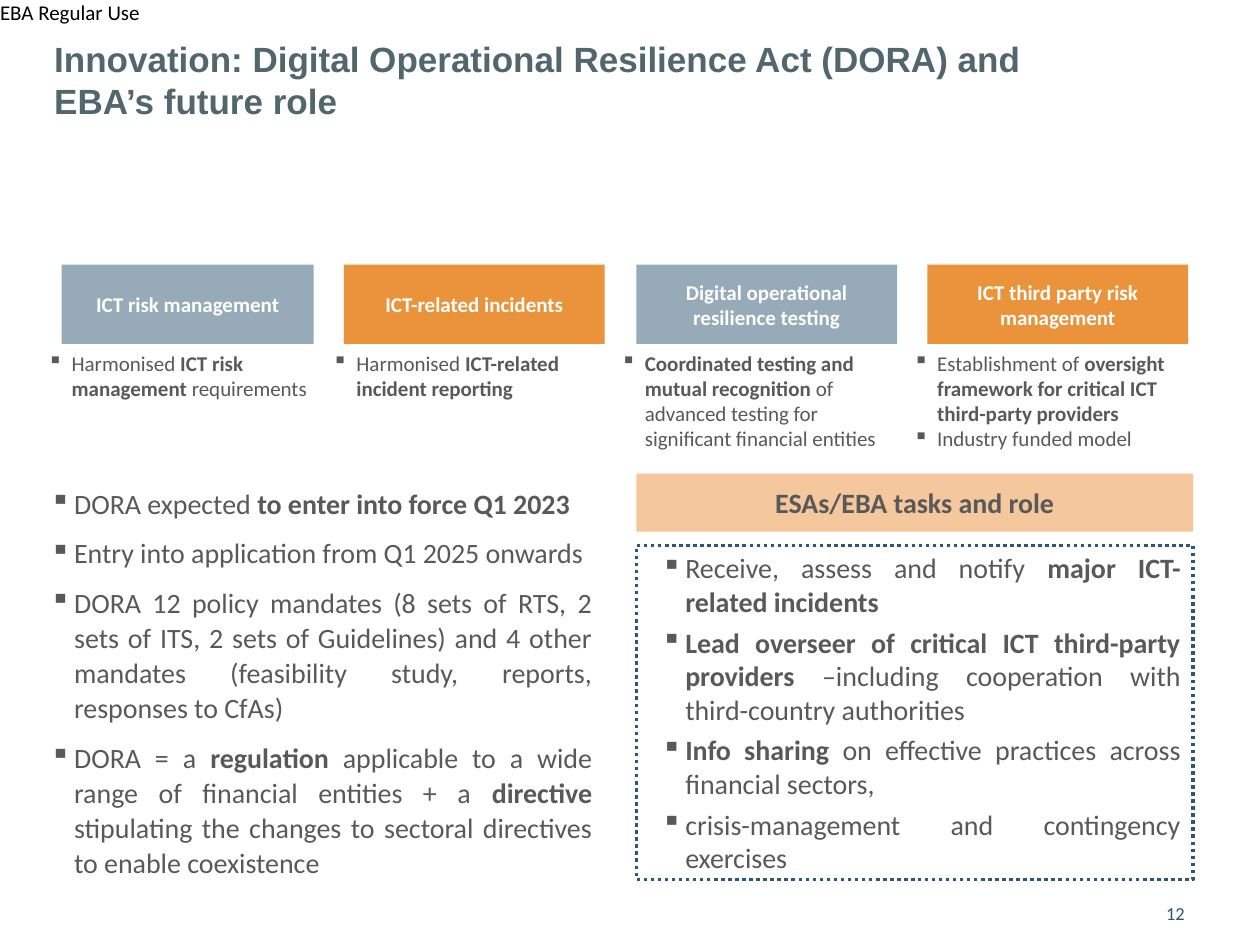
from lxml.etree import SubElement
from pptx import Presentation
from pptx.dml.color import RGBColor
from pptx.enum.dml import MSO_LINE
from pptx.enum.shapes import MSO_SHAPE
from pptx.enum.text import MSO_ANCHOR, MSO_AUTO_SIZE, PP_ALIGN
from pptx.oxml.ns import qn
from pptx.util import Inches, Pt

BLUE, ORANGE, GREY, SLATE, WHITE = "2F5773", "EA933B", "595959", "52666E", "FFFFFF"


def color(hex_string):
    return RGBColor.from_string(hex_string)


def box(left, top, width, height):
    return [Inches(value) for value in (left, top, width, height)]


class SlideBuilder:
    def __init__(self, slide, font="Calibri"):
        self.slide = slide
        self.font = font

    def style(self, paragraph, size, hex_color, bold=False, font=None):
        for run in paragraph.runs:
            run.font.name = font or self.font
            run.font.size = Pt(size)
            run.font.bold = bold
            run.font.color.rgb = color(hex_color)

    def title(self, text, *position):
        title = self.slide.shapes.title
        title.left, title.top, title.width, title.height = box(*position)
        frame = title.text_frame
        frame.text = text
        frame.auto_size = MSO_AUTO_SIZE.NONE
        frame.vertical_anchor = MSO_ANCHOR.TOP
        frame.paragraphs[0].alignment = PP_ALIGN.LEFT
        self.style(frame.paragraphs[0], 20, SLATE, True, "Arial")

    def label(self, text, *position, size=12, text_color="000000",
              align=PP_ALIGN.LEFT, inset=True):
        frame = self.slide.shapes.add_textbox(*box(*position)).text_frame
        frame.word_wrap = inset
        if not inset:
            frame.margin_left = frame.margin_right = 0
            frame.margin_top = frame.margin_bottom = 0
        frame.text = text
        frame.paragraphs[0].alignment = align
        self.style(frame.paragraphs[0], size, text_color)

    def panel(self, fill, *position, opacity=100):
        panel = self.slide.shapes.add_shape(MSO_SHAPE.RECTANGLE, *box(*position))
        panel.shadow.inherit = False
        panel.fill.solid()
        panel.fill.fore_color.rgb = color(fill)
        panel.line.fill.background()
        if opacity < 100:
            rgb = panel.fill._xPr.find(".//" + qn("a:srgbClr"))
            SubElement(rgb, qn("a:alpha"), val=str(opacity * 1000))
        panel.text_frame.word_wrap = True
        panel.text_frame.vertical_anchor = MSO_ANCHOR.MIDDLE
        return panel

    def heading(self, text, fill, *position, opacity=100, size=12, text_color=WHITE):
        frame = self.panel(fill, *position, opacity=opacity).text_frame
        frame.text = text
        frame.paragraphs[0].alignment = PP_ALIGN.CENTER
        self.style(frame.paragraphs[0], size, text_color, True)

    def dotted_list(self, items, *position):
        panel = self.panel(WHITE, *position)
        panel.line.color.rgb = color(BLUE)
        panel.line.width = Pt(2)
        panel.line.dash_style = MSO_LINE.ROUND_DOT
        self.fill_bullets(panel.text_frame, items, 16, PP_ALIGN.JUSTIFY,
                          before=2, after=2, indent=0.29)

    def bullet_list(self, items, *position, size=12, **layout):
        frame = self.slide.shapes.add_textbox(*box(*position)).text_frame
        frame.word_wrap = True
        self.fill_bullets(frame, items, size, **layout)

    def fill_bullets(self, frame, items, size, align=PP_ALIGN.LEFT,
                     before=0, after=0, spacing=1.0, indent=0.19):
        """Write one bullet per item; text between ** marks is bold."""
        for index, item in enumerate(items):
            paragraph = frame.add_paragraph() if index else frame.paragraphs[0]
            properties = paragraph._p.get_or_add_pPr()
            properties.set("marL", str(Inches(indent)))
            properties.set("indent", str(Inches(-0.19)))
            SubElement(properties, qn("a:buChar"), char="▪")
            paragraph.alignment = align
            paragraph.line_spacing = spacing
            paragraph.space_before = Pt(before if index else 0)
            paragraph.space_after = Pt(after)
            pieces = item.split("**")
            for piece in pieces:
                paragraph.add_run().text = piece
            self.style(paragraph, size, GREY)
            for run in paragraph.runs[1::2]:
                run.font.bold = True
            for run in paragraph.runs:
                if not run.text:
                    paragraph._p.remove(run._r)


PILLARS = [
    # heading, heading left and width, list left and width, list items
    ("ICT risk management", 0.49, 2, 0.28, 2.31,
     ["Harmonised **ICT risk management **requirements"]),
    ("ICT-related incidents", 2.73, 2.07, 2.54, 2.31,
     ["Harmonised **ICT-related incident reporting**"]),
    ("Digital operational resilience testing", 5.05, 2.07, 4.83, 2.46,
     ["**Coordinated testing and mutual recognition **of advanced testing "
      "for significant financial entities"]),
    ("ICT third party risk management", 7.36, 2.07, 7.15, 2.4,
     ["Establishment of **oversight framework for critical ICT third-party providers**",
      "Industry funded model"]),
]
TIMELINE = [
    "DORA expected **to enter into force Q1 2023**",
    "Entry into application from Q1 2025 onwards",
    "DORA 12 policy mandates (8 sets of RTS, 2 sets of ITS, 2 sets of Guidelines) "
    "and 4 other mandates (feasibility study, reports, responses to CfAs)",
    "DORA = a **regulation** applicable to a wide range of financial entities + a "
    "**directive** stipulating the changes to sectoral directives to enable coexistence",
]
TASKS = [
    "Receive, assess and notify **major ICT-related incidents**",
    "**Lead overseer of critical ICT third-party providers **–including cooperation "
    "with third-country authorities",
    "**Info sharing **on effective practices across financial sectors,",
    "crisis-management and contingency exercises",
]


def main():
    deck = Presentation()
    deck.slide_width, deck.slide_height = Inches(10), Inches(7.5)
    builder = SlideBuilder(deck.slides.add_slide(deck.slide_layouts[5]))

    builder.label("EBA Regular Use", 0, 0, 1.15, 0.2, inset=False)
    builder.title("Innovation: Digital Operational Resilience Act (DORA) and "
                  "EBA’s future role", 0.33, 0.25, 7.9, 0.61)

    for index, (name, left, width, list_left, list_width, items) in enumerate(PILLARS):
        fill, opacity = (ORANGE, 100) if index % 2 else (BLUE, 50)
        builder.heading(name, fill, left, 2.1, width, 0.63, opacity=opacity)
        builder.bullet_list(items, list_left, 2.73, list_width, 0.91)

    builder.bullet_list(TIMELINE, 0.3, 3.8, 4.5, 3.03, size=16, align=PP_ALIGN.JUSTIFY,
                        before=6, after=2, spacing=1.05)
    builder.heading("ESAs/EBA tasks and role", ORANGE, 5.05, 3.76, 4.42, 0.46,
                    opacity=50, size=16, text_color=GREY)
    builder.dotted_list(TASKS, 5.05, 4.33, 4.42, 2.65)
    builder.label("12", 8.65, 7.11, 0.85, 0.24, size=10.5, text_color=BLUE,
                  align=PP_ALIGN.RIGHT)

    deck.save("out.pptx")


if __name__ == "__main__":
    main()
